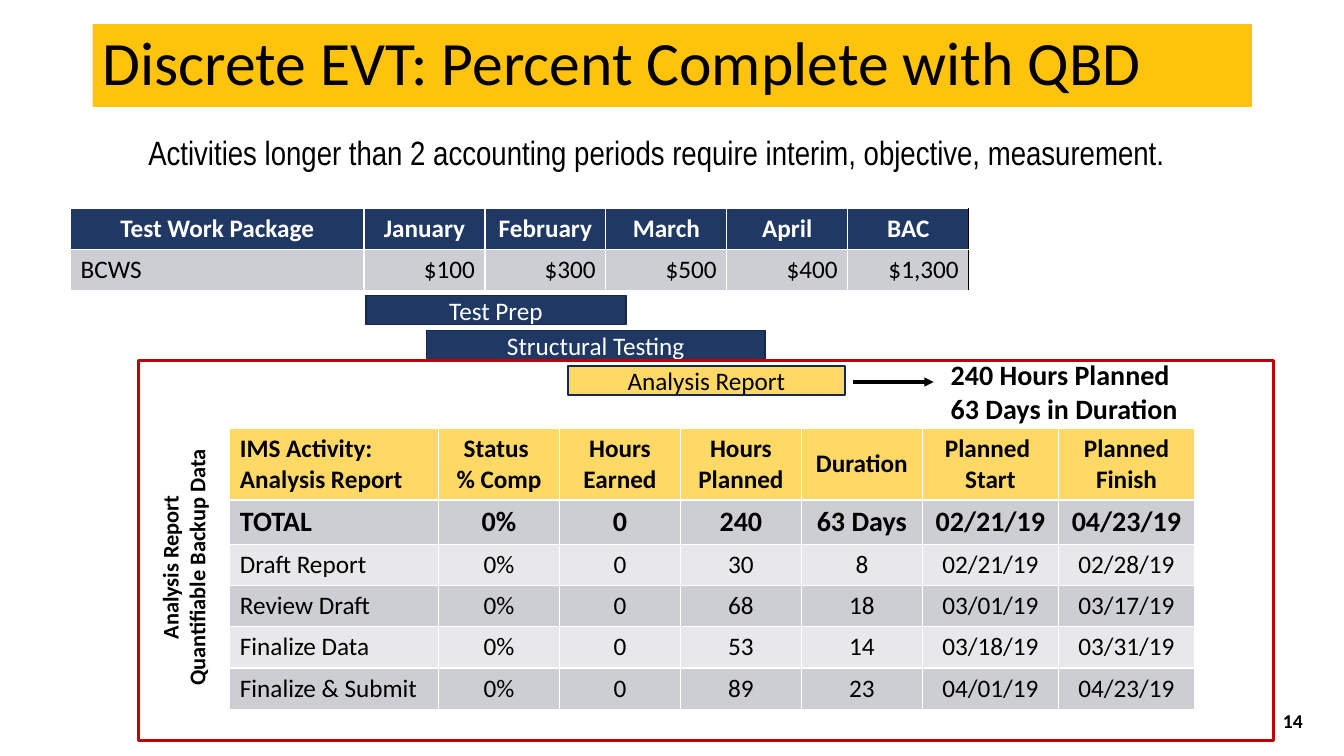
from lxml import etree
from pptx import Presentation
from pptx.dml.color import RGBColor
from pptx.enum.shapes import MSO_CONNECTOR, MSO_SHAPE
from pptx.enum.text import MSO_ANCHOR, MSO_AUTO_SIZE, PP_ALIGN
from pptx.oxml.ns import qn
from pptx.util import Inches, Pt

LEFT, CENTER, RIGHT = PP_ALIGN.LEFT, PP_ALIGN.CENTER, PP_ALIGN.RIGHT
TOP, MIDDLE = MSO_ANCHOR.TOP, MSO_ANCHOR.MIDDLE
RECT, STRAIGHT = MSO_SHAPE.RECTANGLE, MSO_CONNECTOR.STRAIGHT
NO_FIT = MSO_AUTO_SIZE.NONE

SLIDE_W, SLIDE_H = Inches(13.33), Inches(7.5)
BLACK, WHITE, NAVY, NAVY_EDGE = "000000", "FFFFFF", "1F3864", "17294A"
GOLD, AMBER, RED = "FFD966", "FFC30C", "C00000"
GREY, PALE = "CDCED3", "E8E8EA"

# Grid, in percent of the slide's width and height
MONTH, LINE = 9, 5.45
BARS_X, BARS_Y, BAR_STEP, BAR_H = 27.23, 39.07, 4.67, 3.87

BUDGET = [
    ["Test Work Package", "January", "February", "March", "April", "BAC"],
    ["BCWS", "$100", "$300", "$500", "$400", "$1,300"],
]
# Label, start and length in months, fill, text colour
BARS = [
    ("Test Prep", 0, 2.15, NAVY, WHITE),
    ("Structural Testing", 0.5, 2.8, NAVY, WHITE),
    ("Analysis Report", 1.67, 2.29, GOLD, BLACK),
]
BACKUP = [
    ["IMS Activity:\nAnalysis Report", "Status \n% Comp", "Hours Earned",
     "Hours Planned", "Duration", "Planned \nStart", "Planned\nFinish"],
    ["TOTAL", "0%", "0", "240", "63 Days", "02/21/19", "04/23/19"],
    ["Draft Report", "0%", "0", "30", "8", "02/21/19", "02/28/19"],
    ["Review Draft", "0%", "0", "68", "18", "03/01/19", "03/17/19"],
    ["Finalize Data", "0%", "0", "53", "14", "03/18/19", "03/31/19"],
    ["Finalize & Submit", "0%", "0", "89", "23", "04/01/19", "04/23/19"],
]


def col(share):
    return int(SLIDE_W * share / 100)


def row(share):
    return int(SLIDE_H * share / 100)


def box(x, y, w, h):
    return col(x), row(y), col(w), row(h)


def rgb(value):
    return RGBColor.from_string(value)


def paint(target, color):
    target.fill.solid()
    target.fill.fore_color.rgb = rgb(color)


def write(tf, text, size, color=BLACK, bold=False, align=LEFT, anchor=TOP,
          font="Calibri"):
    tf.word_wrap = True
    tf.vertical_anchor = anchor
    for i, line in enumerate(text.split("\n")):
        p = tf.paragraphs[0] if i == 0 else tf.add_paragraph()
        p.alignment = align
        r = p.add_run()
        r.text = line
        r.font.name, r.font.size, r.font.bold = font, Pt(size), bold
        r.font.color.rgb = rgb(color)


def fill_placeholder(sp, place, text, size, **style):
    sp.left, sp.top, sp.width, sp.height = box(*place)
    sp.text_frame.auto_size = NO_FIT
    write(sp.text_frame, text, size, **style)


def add_label(slide, place, text, size, **style):
    sp = slide.shapes.add_textbox(*box(*place))
    write(sp.text_frame, text, size, bold=True, **style)
    return sp


def add_rect(slide, place, line, width, fill=None):
    sp = slide.shapes.add_shape(RECT, *box(*place))
    sp.shadow.inherit = False
    if fill:
        paint(sp, fill)
    else:
        sp.fill.background()
    sp.line.color.rgb = rgb(line)
    sp.line.width = Pt(width)
    return sp


def add_arrow(slide, x1, x2, y):
    line = slide.shapes.add_connector(STRAIGHT, col(x1), row(y), col(x2), row(y))
    line.line.color.rgb = rgb(BLACK)
    line.line.width = Pt(2.25)
    ln = line.line._get_or_add_ln()
    etree.SubElement(ln, qn("a:tailEnd"), type="triangle")
    etree.SubElement(line._element.spPr, qn("a:effectLst"))


def add_right_border(cell, color):
    ln = etree.SubElement(cell._tc.get_or_add_tcPr(), qn("a:lnR"), w=str(Pt(1)))
    fill = etree.SubElement(ln, qn("a:solidFill"))
    etree.SubElement(fill, qn("a:srgbClr"), val=color)


def add_grid(slide, x, y, widths, heights, data, style_cell):
    place = box(x, y, sum(widths), sum(heights))
    table = slide.shapes.add_table(len(data), len(widths), *place).table
    for column, width in zip(table.columns, widths):
        column.width = col(width)
    for line, height in zip(table.rows, heights):
        line.height = row(height)
    for i, values in enumerate(data):
        for j, value in enumerate(values):
            cell = table.cell(i, j)
            fill, style = style_cell(i, j)
            write(cell.text_frame, value, **style)
            cell.vertical_anchor = MIDDLE if i == 0 else TOP
            paint(cell, fill)
    return table


def budget_style(i, j):
    if i == 0:
        return NAVY, dict(size=18, color=WHITE, bold=True, align=CENTER)
    return GREY, dict(size=18, align=RIGHT if j else LEFT)


def backup_style(i, j):
    fill = GOLD if i == 0 else GREY if i % 2 else PALE
    return fill, dict(size=20 if i == 1 else 18, bold=i < 2,
                      align=CENTER if j else LEFT)


def main():
    prs = Presentation()
    prs.slide_width, prs.slide_height = SLIDE_W, SLIDE_H
    slide = prs.slides.add_slide(prs.slide_layouts[1])

    # Title and lead sentence
    title, lead = slide.shapes.title, slide.placeholders[1]
    paint(title, AMBER)
    fill_placeholder(title, (6.9, 3.2, 86.25, 10.93),
                     "Discrete EVT: Percent Complete with QBD", 44, anchor=MIDDLE)
    title.text_frame.paragraphs[0].line_spacing = 0.9
    fill_placeholder(lead, (10.28, 16.8, 91.45, 6.67),
                     "Activities longer than 2 accounting periods require interim, "
                     "objective, measurement.", 24, font="Arial Narrow")
    pPr = lead.text_frame.paragraphs[0]._p.get_or_add_pPr()
    pPr.set("marL", str(Inches(0.25)))
    pPr.set("indent", str(-Inches(0.25)))
    etree.SubElement(pPr, qn("a:buNone"))

    # Monthly budget
    budget = add_grid(slide, 5.25, 27.6, [21.83] + [MONTH] * 5, [LINE] * 2,
                      BUDGET, budget_style)
    for i in range(len(BUDGET)):
        cell = budget.cell(i, 5)
        add_right_border(cell, BLACK)
        paint(cell, NAVY if i == 0 else GREY)
        tcPr = cell._tc.tcPr
        tcPr.insert(0, tcPr.find(qn("a:lnR")))

    # Schedule bars under the months
    for i, (name, start, length, fill, color) in enumerate(BARS):
        place = (BARS_X + start * MONTH, BARS_Y + i * BAR_STEP, length * MONTH, BAR_H)
        sp = add_rect(slide, place, NAVY_EDGE, 1, fill)
        write(sp.text_frame, name, 18, color, align=CENTER, anchor=MIDDLE)

    # Backup data for the analysis report
    add_grid(slide, 17.1, 56.67, [15.53] + [MONTH] * 4 + [10.13] * 2,
             [9.3, 5.7] + [LINE] * 4, BACKUP, backup_style)
    add_label(slide, (70, 46.67, 19.05, 10.27),
              "240 Hours Planned\n63 Days in Duration", 20)
    add_arrow(slide, 63.47, 69.47, 50.53)
    side = add_label(slide, (3.3, 70.8, 20.7, 8.53),
                     "Analysis Report Quantifiable Backup Data", 16, align=CENTER)
    side.rotation = 270

    # Slide number and frame
    add_label(slide, (75.17, 92.67, 22.5, 5.33), "14", 14, align=RIGHT, anchor=MIDDLE)
    add_rect(slide, (10.28, 47.73, 84.47, 50.27), RED, 2.25)

    prs.save("out.pptx")


if __name__ == "__main__":
    main()
